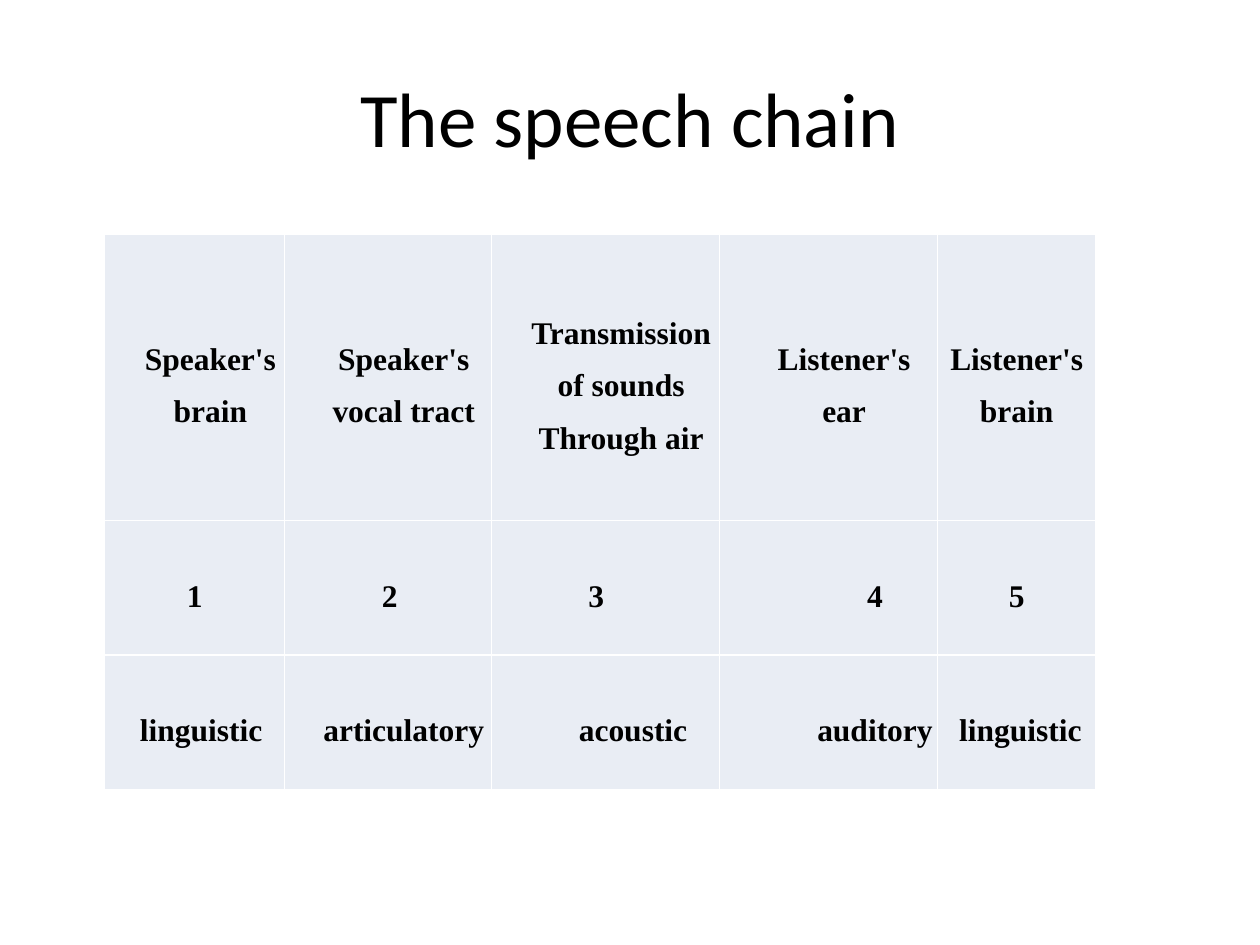
from lxml import etree
from pptx import Presentation, util as u
from pptx.dml import color
from pptx.enum import text as t
from pptx.oxml import ns

WIDTH, HEIGHT = u.Inches(10), u.Inches(7.5)
COLUMNS = [1.43, 1.64, 1.81, 1.73, 1.26]
ROWS = [2.27, 1.07, 1.07]
CENTER, LEFT = t.PP_ALIGN.CENTER, t.PP_ALIGN.LEFT
INDENT, FIRST = 0.25, 0.49

# Each cell: text, then its paragraph format where it differs from centred
STAGES = [
    [("Speaker's brain", dict(left=INDENT)),
     ("Speaker's vocal tract", dict(left=INDENT)),
     ("Transmission of sounds\nThrough air", dict(left=INDENT)),
     ("Listener's ear", dict(left=INDENT)),
     ("Listener's brain", {})],
    [("1", {}),
     ("2", dict(left=INDENT, first=FIRST, align=LEFT)),
     ("3", dict(left=INDENT, first=FIRST, align=LEFT)),
     ("4", dict(left=INDENT, first=FIRST)),
     ("5", {})],
    [("linguistic", dict(left=INDENT, align=LEFT)),
     ("articulatory", dict(left=INDENT)),
     ("acoustic", dict(left=0.44)),
     ("auditory", dict(left=INDENT, first=FIRST)),
     ("linguistic", dict(left=0.06))],
]


def rgb(value):
    return color.RGBColor.from_string(value)


def write(frame, words, font="Times New Roman", size=18, bold=True,
          align=CENTER, left=0, first=0, spacing=1.5):
    """Fill a text frame, one paragraph per line of words."""
    frame.word_wrap = True
    for number, line in enumerate(words.split("\n")):
        para = frame.add_paragraph() if number else frame.paragraphs[0]
        para.alignment = align
        para.line_spacing = spacing
        para.space_before = u.Pt(0)
        properties = para._p.get_or_add_pPr()
        properties.set("marL", str(u.Inches(left)))
        properties.set("indent", str(u.Inches(first)))
        span = para.add_run()
        span.text = line
        span.font.name = font
        span.font.size = u.Pt(size)
        span.font.bold = bold
        span.font.color.rgb = rgb("000000")


def add_borders(cell, value, points):
    properties = cell._tc.get_or_add_tcPr()
    for side in ("a:lnL", "a:lnR", "a:lnT", "a:lnB"):
        line = etree.SubElement(properties, ns.qn(side), w=str(u.Pt(points)))
        fill = etree.SubElement(line, ns.qn("a:solidFill"))
        etree.SubElement(fill, ns.qn("a:srgbClr"), val=value)


def place_title(page, left, top, width, height):
    title = page.shapes.title
    title.left, title.top, title.width, title.height = left, top, width, height
    title.text_frame.vertical_anchor = t.MSO_ANCHOR.MIDDLE
    write(title.text_frame, "The speech chain", font="Calibri", size=44,
          bold=False, spacing=1.0)


def place_chain_table(page, left, top, width, height):
    table = page.shapes.add_table(len(ROWS), len(COLUMNS), left, top,
                                  width, height).table
    table.first_row = table.horz_banding = False
    for column, share in zip(table.columns, COLUMNS):
        column.width = int(width * share / sum(COLUMNS))
    for row, share in zip(table.rows, ROWS):
        row.height = int(height * share / sum(ROWS))
    for row, stages in zip(table.rows, STAGES):
        for cell, (words, style) in zip(row.cells, stages):
            cell.margin_left = cell.margin_right = u.Inches(0.03)
            cell.margin_top = cell.margin_bottom = 0
            cell.vertical_anchor = t.MSO_ANCHOR.MIDDLE
            add_borders(cell, "FFFFFF", 1)
            cell.fill.solid()
            cell.fill.fore_color.rgb = rgb("E9EDF4")
            write(cell.text_frame, words, **style)


def main():
    deck = Presentation()
    deck.slide_width, deck.slide_height = WIDTH, HEIGHT
    page = deck.slides.add_slide(deck.slide_layouts[5])  # title only
    # Heading
    place_title(page, int(WIDTH * 0.05), int(HEIGHT * 0.04),
                int(WIDTH * 0.9), int(HEIGHT / 6))
    # Stages of the chain
    place_chain_table(page, u.Inches(0.83), u.Inches(1.86),
                      u.Inches(sum(COLUMNS)), u.Inches(sum(ROWS)))
    deck.save("out.pptx")


if __name__ == "__main__":
    main()
